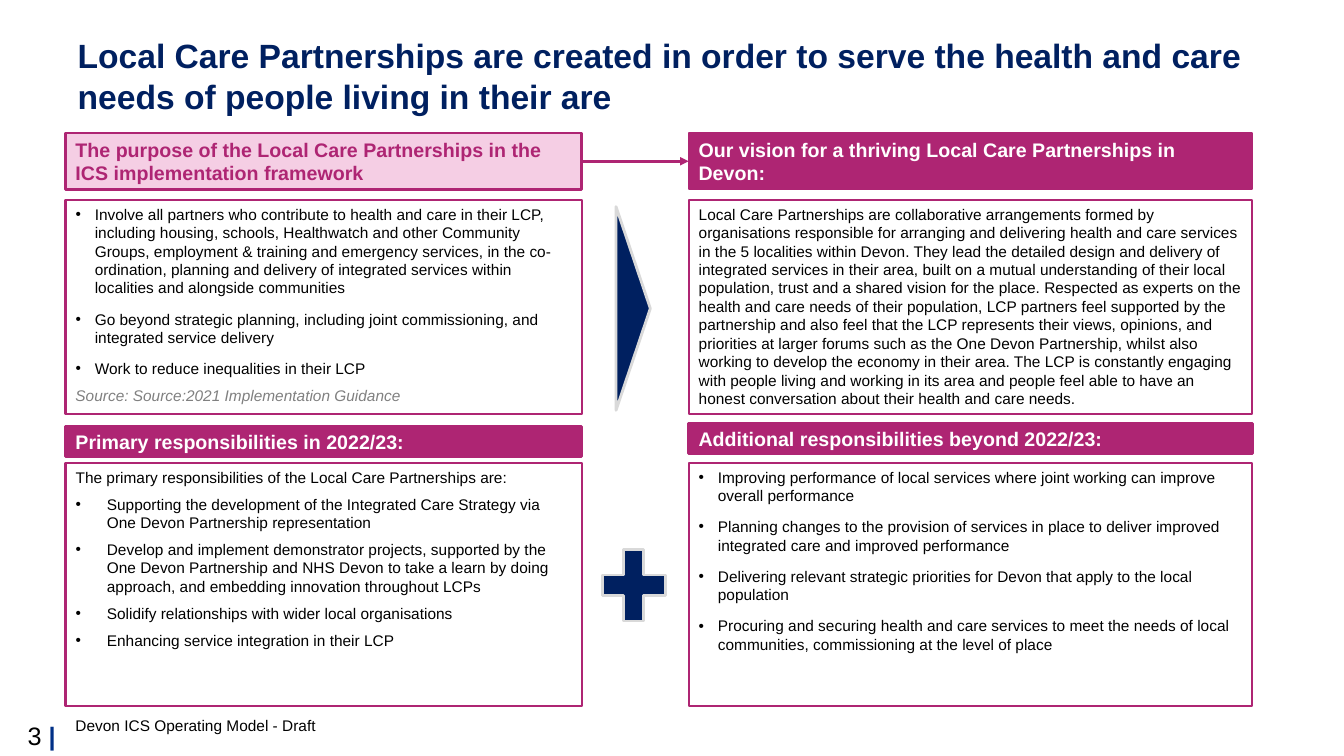
from dataclasses import dataclass

from lxml import etree
from pptx import Presentation
from pptx.dml.color import RGBColor
from pptx.enum.shapes import MSO_CONNECTOR, MSO_SHAPE
from pptx.enum.text import MSO_ANCHOR, MSO_AUTO_SIZE, PP_ALIGN
from pptx.oxml.ns import qn
from pptx.util import Inches, Pt

RECTANGLE, TRIANGLE, PLUS = MSO_SHAPE.RECTANGLE, MSO_SHAPE.ISOSCELES_TRIANGLE, MSO_SHAPE.MATH_PLUS
STRAIGHT = MSO_CONNECTOR.STRAIGHT
TOP, MIDDLE = MSO_ANCHOR.TOP, MSO_ANCHOR.MIDDLE
LEFT, RIGHT = PP_ALIGN.LEFT, PP_ALIGN.RIGHT
NO_AUTOFIT = MSO_AUTO_SIZE.NONE
LEFT_SIDE, RIGHT_SIDE = 1, 3


@dataclass(frozen=True)
class Theme:
    font: str = "Arial"
    navy: str = "002060"
    blue: str = "003087"
    magenta: str = "AE2573"
    pink: str = "F5CEE4"
    white: str = "FFFFFF"
    black: str = "000000"
    grey: str = "808080"
    silver: str = "D9D9D9"
    title_size: int = 24
    number_size: int = 18
    heading_size: int = 14
    body_size: int = 11


class SlideBuilder:
    def __init__(self, slide, theme):
        self.slide = slide
        self.theme = theme

    def place(self, shape, box):
        shape.left, shape.top, shape.width, shape.height = map(Inches, box)

    def paint(self, shape, fill, line, line_width):
        shape.fill.solid()
        shape.fill.fore_color.rgb = RGBColor.from_string(fill)
        shape.line.color.rgb = RGBColor.from_string(line)
        shape.line.width = Pt(line_width)

    def style_font(self, font, size, color, bold=False, italic=False):
        font.name, font.size = self.theme.font, Pt(size)
        font.bold, font.italic = bold, italic
        font.color.rgb = RGBColor.from_string(color)

    def prepare_frame(self, shape, anchor=TOP, vertical_margin=0.05):
        frame = shape.text_frame
        frame.word_wrap = True
        frame.auto_size = NO_AUTOFIT
        frame.vertical_anchor = anchor
        frame.margin_left = frame.margin_right = Inches(0.1)
        frame.margin_top = frame.margin_bottom = Inches(vertical_margin)
        return frame

    def set_bullet(self, paragraph, indent):
        properties = paragraph._p.get_or_add_pPr()
        properties.set("marL", str(Inches(indent)))
        properties.set("indent", str(-Inches(indent)))
        if indent:
            bullet_font = etree.SubElement(properties, qn("a:buFont"))
            bullet_font.set("typeface", self.theme.font)
            etree.SubElement(properties, qn("a:buChar")).set("char", "•")
        else:
            etree.SubElement(properties, qn("a:buNone"))

    def title(self, text, box):
        shape = self.slide.shapes.title
        self.place(shape, box)
        paragraph = self.prepare_frame(shape).paragraphs[0]
        paragraph.text = text
        paragraph.alignment = LEFT
        self.style_font(paragraph.font, self.theme.title_size, self.theme.navy, bold=True)

    def panel(self, index, box, items, space_after=0):
        """Fill a body placeholder with (text, bullet indent) items."""
        shape = self.slide.placeholders[index]
        self.place(shape, box)
        self.paint(shape, self.theme.white, self.theme.magenta, 1.5)
        frame = self.prepare_frame(shape)
        for position, (text, indent) in enumerate(items):
            paragraph = frame.add_paragraph() if position else frame.paragraphs[0]
            paragraph.text = text
            paragraph.alignment = LEFT
            paragraph.space_before = Pt(3 if position else 0)
            paragraph.space_after = Pt(space_after)
            self.set_bullet(paragraph, indent)
            self.style_font(paragraph.font, self.theme.body_size, self.theme.black)

    def symbol(self, kind, box, fill, line, line_width=2, rotation=0):
        shape = self.slide.shapes.add_shape(kind, *map(Inches, box))
        shape.shadow.inherit = False
        shape.rotation = rotation
        self.paint(shape, fill, line, line_width)
        return shape

    def heading(self, text, box, fill, color, line_width=2):
        shape = self.symbol(RECTANGLE, box, fill, self.theme.magenta, line_width)
        paragraph = self.prepare_frame(shape, MIDDLE).paragraphs[0]
        paragraph.text = text
        paragraph.alignment = LEFT
        self.style_font(paragraph.font, self.theme.heading_size, color, bold=True)
        return shape

    def label(self, text, box, color, italic=False, anchor=TOP, vertical_margin=0.05):
        shape = self.slide.shapes.add_textbox(*map(Inches, box))
        paragraph = self.prepare_frame(shape, anchor, vertical_margin).paragraphs[0]
        paragraph.text = text
        self.style_font(paragraph.font, self.theme.body_size, color, italic=italic)

    def page_number(self, number, box):
        shape = self.slide.shapes.add_textbox(*map(Inches, box))
        paragraph = self.prepare_frame(shape).paragraphs[0]
        paragraph.alignment = RIGHT
        for text, color, bold in ((f"{number} ", self.theme.black, False),
                                  ("|", self.theme.blue, True)):
            run = paragraph.add_run()
            run.text = text
            self.style_font(run.font, self.theme.number_size, color, bold)

    def arrow(self, start, end):
        connector = self.slide.shapes.add_connector(STRAIGHT, 0, 0, 0, 0)
        connector.begin_connect(start, RIGHT_SIDE)
        connector.end_connect(end, LEFT_SIDE)
        connector.line.color.rgb = RGBColor.from_string(self.theme.magenta)
        connector.line.width = Pt(2)
        line = connector._element.spPr.find(qn("a:ln"))
        etree.SubElement(line, qn("a:tailEnd")).set("type", "triangle")
        etree.SubElement(connector._element.spPr, qn("a:effectLst"))


def main():
    presentation = Presentation()
    presentation.slide_width, presentation.slide_height = Inches(13.33), Inches(7.5)
    theme = Theme()
    # The comparison layout holds a title and four body placeholders
    slide = presentation.slides.add_slide(presentation.slide_layouts[4])
    builder = SlideBuilder(slide, theme)

    # Two columns (left, width) and two rows of panels (top, height)
    left_x, left_width = 0.65, 5.12
    right_x, right_width = 6.83, 5.59
    upper_y, upper_height = 1.98, 2.13
    lower_y, lower_height = 4.59, 2.41
    heading_y, heading_height = 1.32, 0.56
    bullet, wide_bullet = 0.19, 0.31

    # Title and footer
    builder.title("Local Care Partnerships are created in order to serve the health and care "
                  "needs of people living in their are", (0.67, 0.3, 12, 0.72))
    builder.label("Devon ICS Operating Model - Draft", (left_x, 7.06, 3.38, 0.36), theme.black)
    builder.page_number(3, (0, 7.1, 0.65, 0.36))

    # Panels
    builder.panel(1, (left_x, upper_y, left_width, upper_height), [
        ("Involve all partners who contribute to health and care in their LCP, including housing, schools, Healthwatch and other Community Groups, employment & training and emergency services, in the co-ordination, planning and delivery of integrated services within localities and alongside communities", bullet),
        ("Go beyond strategic planning, including joint commissioning, and integrated service delivery", bullet),
        ("Work to reduce inequalities in their LCP", bullet),
    ], space_after=6)
    vision_sentences = [
        "Local Care Partnerships are collaborative arrangements formed by organisations responsible for arranging and delivering health and care services in the 5 localities within Devon.",
        "They lead the detailed design and delivery of integrated services in their area, built on a mutual understanding of their local population, trust and a shared vision for the place.",
        "Respected as experts on the health and care needs of their population, LCP partners feel supported by the partnership and also feel that the LCP represents their views, opinions, and priorities at larger forums such as the One Devon Partnership, whilst also working to develop the economy in their area.",
        "The LCP is constantly engaging with people living and working in its area and people feel able to have an honest conversation about their health and care needs.",
    ]
    builder.panel(3, (right_x, upper_y, right_width, upper_height), [(" ".join(vision_sentences), 0)])
    builder.panel(2, (left_x, lower_y, left_width, lower_height), [
        ("The primary responsibilities of the Local Care Partnerships are:", 0),
        ("Supporting the development of the Integrated Care Strategy via One Devon Partnership representation", wide_bullet),
        ("Develop and implement demonstrator projects, supported by the One Devon Partnership and NHS Devon to take a learn by doing approach, and embedding innovation throughout LCPs", wide_bullet),
        ("Solidify relationships with wider local organisations", wide_bullet),
        ("Enhancing service integration in their LCP", wide_bullet),
    ], space_after=3)
    builder.panel(4, (right_x, lower_y, right_width, lower_height), [
        ("Improving performance of local services where joint working can improve overall performance", bullet),
        ("Planning changes to the provision of services in place to deliver improved integrated care and improved performance", bullet),
        ("Delivering relevant strategic priorities for Devon that apply to the local population", bullet),
        ("Procuring and securing health and care services to meet the needs of local communities, commissioning at the level of place", bullet),
    ], space_after=6)
    builder.label("Source: Source:2021 Implementation Guidance", (left_x, 3.85, 4.62, 0.15),
                  theme.grey, italic=True, anchor=MIDDLE, vertical_margin=0)

    # Headings and the arrow between the upper two
    purpose = builder.heading("The purpose of the Local Care Partnerships in the ICS implementation framework",
                              (left_x, heading_y, left_width, heading_height), theme.pink, theme.magenta)
    vision = builder.heading("Our vision for a thriving Local Care Partnerships in Devon:",
                             (right_x, heading_y, right_width, heading_height), theme.magenta, theme.white, 1.5)
    builder.heading("Primary responsibilities in 2022/23:", (left_x, 4.23, left_width, 0.3),
                    theme.magenta, theme.white)
    builder.heading("Additional responsibilities beyond 2022/23:", (right_x, 4.2, right_width, 0.3),
                    theme.magenta, theme.white)
    builder.arrow(purpose, vision)

    # Symbols between the columns
    builder.symbol(TRIANGLE, (5.27, 2.89, 2.02, 0.34), theme.navy, theme.silver, rotation=90)
    builder.symbol(PLUS, (5.86, 5.32, 0.85, 0.97), theme.navy, theme.silver)

    presentation.save("out.pptx")


if __name__ == "__main__":
    main()
